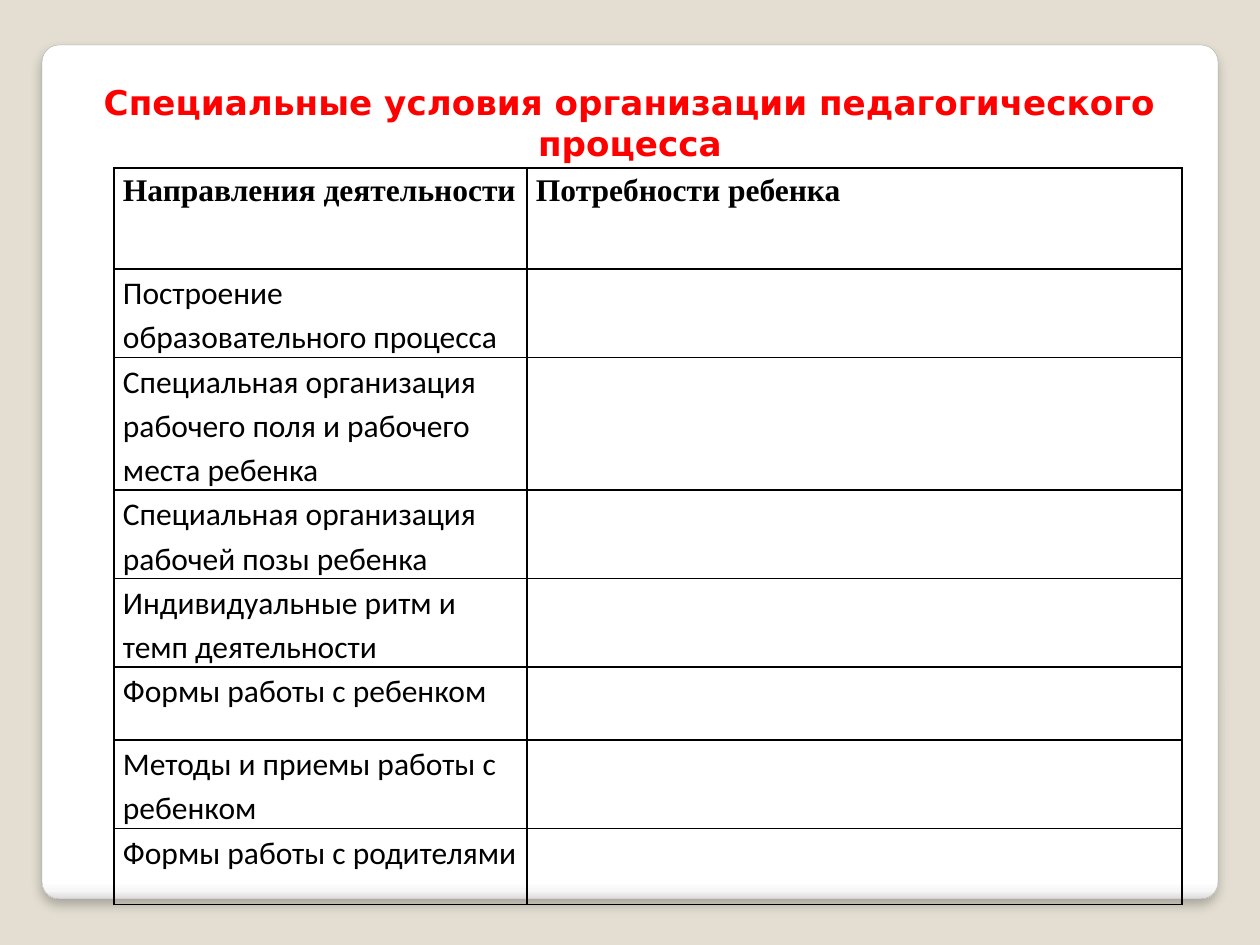
from lxml.etree import SubElement
from pptx import Presentation
from pptx.dml.color import RGBColor
from pptx.enum.shapes import MSO_SHAPE
from pptx.enum.text import MSO_ANCHOR, PP_ALIGN
from pptx.oxml import parse_xml
from pptx.oxml.ns import nsdecls, qn
from pptx.util import Emu, Pt

PX_PER_INCH = 126
BEIGE = RGBColor(0xE3, 0xDE, 0xD1)
WHITE = RGBColor(0xFF, 0xFF, 0xFF)
PALE_GREY = RGBColor(0xF7, 0xF7, 0xF7)
LIGHT_GREY = RGBColor(0xDA, 0xDA, 0xDA)
MID_GREY = RGBColor(0xA4, 0xA4, 0xA4)
BLACK = RGBColor(0, 0, 0)
RED = RGBColor(0xFF, 0, 0)

HEADING = "Специальные условия организации педагогического процесса"
COLUMN_HEADS = ["Направления деятельности", "Потребности ребенка"]
# Direction of work and its row height in px
DIRECTIONS = [
    ("Построение образовательного процесса", 88),
    ("Специальная организация рабочего поля и рабочего места ребенка", 132),
    ("Специальная организация рабочей позы ребенка", 88),
    ("Индивидуальные ритм и темп деятельности", 88),
    ("Формы работы с ребенком", 73),
    ("Методы и приемы работы с ребенком", 88),
    ("Формы работы с родителями", 76),
]


def px(length):
    return Emu(round(length * 914400 / PX_PER_INCH))


def write(frame, text, font="Calibri", size=18, color=BLACK, bold=False,
          align=PP_ALIGN.LEFT, line_spacing=1.0):
    paragraph = frame.paragraphs[0]
    paragraph.alignment = align
    paragraph.line_spacing = line_spacing
    run = paragraph.add_run()
    run.text = text
    run.font.name = font
    run.font.size = Pt(size)
    run.font.bold = bold
    run.font.color.rgb = color


def add_panel(slide, left, top, width, height):
    panel = slide.shapes.add_shape(
        MSO_SHAPE.ROUNDED_RECTANGLE, px(left), px(top), px(width), px(height))
    panel.adjustments[0] = 0.02
    panel.line.color.rgb = MID_GREY
    panel.line.width = Pt(0.16)
    # Vertical gradient that darkens only at the lower edge
    stops = [(0, WHITE), (98, WHITE), (99, PALE_GREY), (100, LIGHT_GREY)]
    stop_xml = "".join(
        f'<a:gs pos="{pos * 1000}"><a:srgbClr val="{color}"/></a:gs>'
        for pos, color in stops)
    outline = panel.line._get_or_add_ln()
    outline.addprevious(parse_xml(
        f'<a:gradFill {nsdecls("a")}><a:gsLst>{stop_xml}</a:gsLst>'
        '<a:lin ang="5400000" scaled="0"/></a:gradFill>'))
    # Soft shadow straight below
    outline.addnext(parse_xml(
        f'<a:effectLst {nsdecls("a")}><a:outerShdw blurRad="{Pt(6)}" '
        f'dist="{Pt(4)}" dir="5400000" algn="tl" rotWithShape="0">'
        f'<a:srgbClr val="{BLACK}"><a:alpha val="25000"/></a:srgbClr>'
        '</a:outerShdw></a:effectLst>'))
    # Keep the panel behind the title
    slide.shapes.title._element.addprevious(panel._element)


def place_title(slide, left, top, width, height):
    title = slide.shapes.title
    title.left, title.top = px(left), px(top)
    title.width, title.height = px(width), px(height)
    frame = title.text_frame
    frame.word_wrap = True
    frame.vertical_anchor = MSO_ANCHOR.MIDDLE
    write(frame, HEADING, font="DejaVu Sans", size=19.5, color=RED, bold=True,
          align=PP_ALIGN.CENTER)


def border_cell(cell):
    properties = cell._tc.get_or_add_tcPr()
    for position, side in enumerate(("lnL", "lnR", "lnT", "lnB")):
        line = parse_xml(f'<a:{side} {nsdecls("a")} w="{Pt(1)}"/>')
        fill = SubElement(line, qn("a:solidFill"))
        SubElement(fill, qn("a:srgbClr"), val=str(BLACK))
        properties.insert(position, line)


def add_needs_table(slide, left, top, column_widths, head_height):
    rows = [COLUMN_HEADS] + [[direction, ""] for direction, _ in DIRECTIONS]
    heights = [head_height] + [height for _, height in DIRECTIONS]
    table = slide.shapes.add_table(
        len(rows), len(column_widths), px(left), px(top),
        px(sum(column_widths)), px(sum(heights))).table
    table.horz_banding = False
    for column, width in zip(table.columns, column_widths):
        column.width = px(width)
    for r, (texts, height) in enumerate(zip(rows, heights)):
        table.rows[r].height = px(height)
        for c, text in enumerate(texts):
            cell = table.cell(r, c)
            cell.margin_left = cell.margin_right = px(9)
            cell.margin_top = cell.margin_bottom = 0
            cell.fill.background()
            border_cell(cell)
            if text:
                font = "Calibri" if r else "Times New Roman"
                write(cell.text_frame, text, font=font, bold=r == 0,
                      line_spacing=1.15)


def main():
    deck = Presentation()
    deck.slide_width, deck.slide_height = px(1260), px(945)
    slide = deck.slides.add_slide(deck.slide_layouts[5])
    slide.background.fill.solid()
    slide.background.fill.fore_color.rgb = BEIGE

    add_panel(slide, 42, 45, 1176, 854)
    place_title(slide, 58, 76, 1144, 92)
    add_needs_table(slide, 114, 168, column_widths=(413, 655), head_height=101)
    deck.save("out.pptx")


if __name__ == "__main__":
    main()
